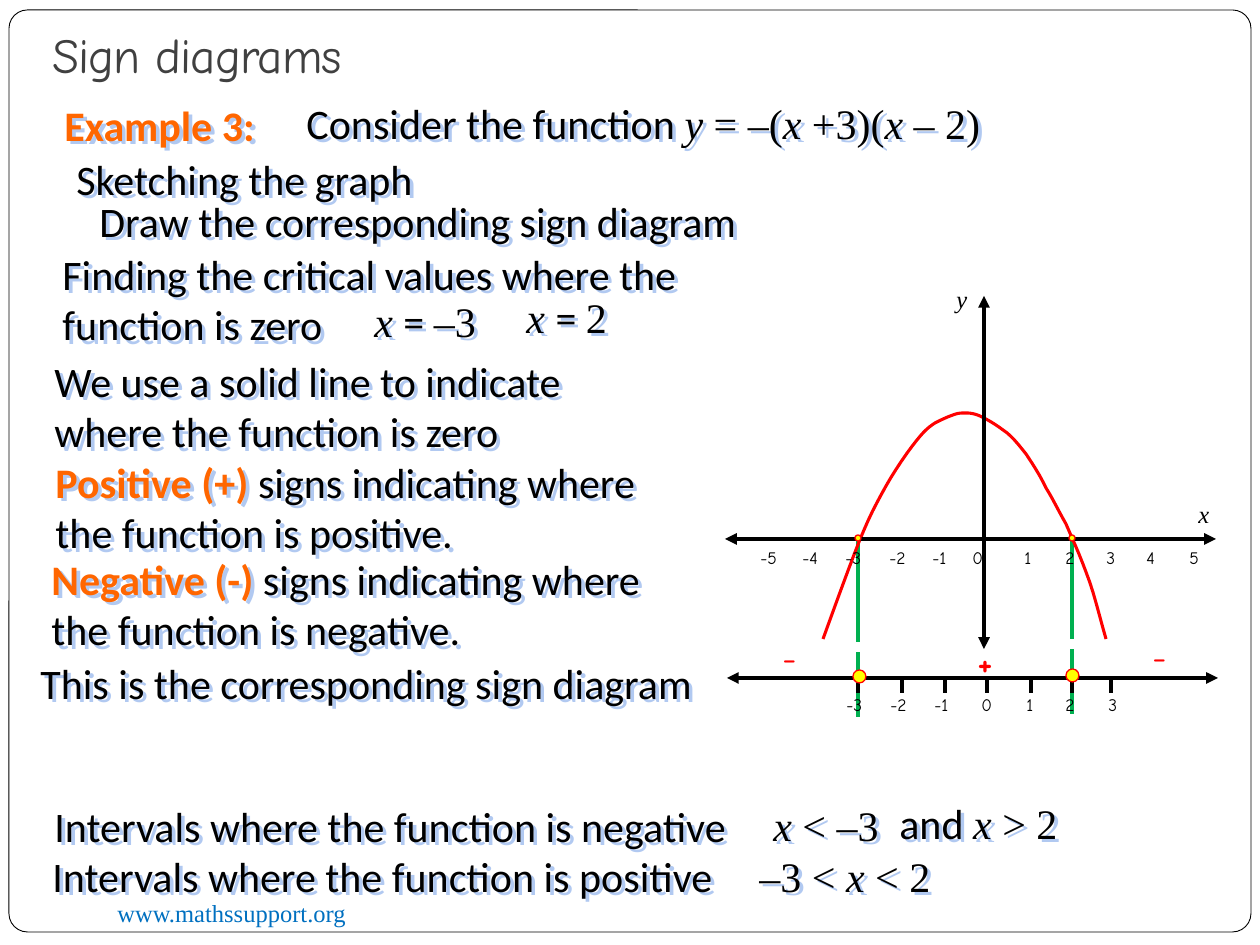
from dataclasses import dataclass

from lxml.etree import SubElement
from pptx import Presentation
from pptx.dml.color import RGBColor
from pptx.enum.shapes import MSO_CONNECTOR, MSO_SHAPE
from pptx.enum.text import MSO_ANCHOR, PP_ALIGN
from pptx.oxml.ns import qn
from pptx.util import Pt

PX = 914400 / 126
COLORS = {"ink": "000000", "white": "FFFFFF", "title": "404040", "link": "0070C0",
          "accent": "FF6600", "red": "FF0000", "green": "00B050",
          "yellow": "FFFF00", "shade": "B1C9F1"}
SANS, SERIF, COMIC = "Calibri", "Times New Roman", "Comic Neue"


@dataclass
class Run:
    text: str
    font: str = SANS
    color: str = "ink"
    bold: bool = False
    italic: bool = False


@dataclass
class Note:
    left: int
    top: int
    width: int
    height: int
    runs: list


@dataclass
class Scale:
    top: int
    marks: dict


def emu(px: float) -> int:
    return round(px * PX)


def rgb(name: str) -> RGBColor:
    return RGBColor.from_string(COLORS[name])


def fill_text(frame, runs: list, size: float) -> None:
    para = frame.paragraphs[0]
    para.alignment = PP_ALIGN.LEFT
    for item in runs:
        run = para.add_run()
        run.text = item.text
        font = run.font
        font.name, font.size = item.font, Pt(size)
        font.bold, font.italic = item.bold, item.italic
        font.color.rgb = rgb(item.color)


def add_text(slide, note: Note, size: float = 24, shade: bool = False) -> None:
    box = slide.shapes.add_textbox(*map(emu, (note.left, note.top, note.width, note.height)))
    box.text_frame.word_wrap = True
    fill_text(box.text_frame, note.runs, size)
    if shade:
        effects = SubElement(box.element.spPr, qn("a:effectLst"))
        shadow = SubElement(effects, qn("a:outerShdw"), dist="38100", dir="2700000",
                            algn="tl", rotWithShape="0")
        SubElement(shadow, qn("a:srgbClr"), val=COLORS["shade"])


def add_line(slide, x1: int, y1: int, x2: int, y2: int, color: str = "ink",
             width: float = 1.75, arrows: bool = False) -> None:
    line = slide.shapes.add_connector(MSO_CONNECTOR.STRAIGHT, *map(emu, (x1, y1, x2, y2)))
    line.line.color.rgb = rgb(color)
    line.line.width = Pt(width)
    if arrows:
        for end in ("a:headEnd", "a:tailEnd"):
            SubElement(line.line._get_or_add_ln(), qn(end), type="triangle")
    SubElement(line.element.spPr, qn("a:effectLst"))


def add_block(slide, kind, left: int, top: int, width: int, height: int,
              fill: str, edge: str, weight: float):
    block = slide.shapes.add_shape(kind, *map(emu, (left, top, width, height)))
    block.shadow.inherit = False
    block.fill.solid()
    block.fill.fore_color.rgb = rgb(fill)
    block.line.color.rgb = rgb(edge)
    block.line.width = Pt(weight)
    return block


def add_curve(slide, start: tuple, curves: list, steps: int = 6) -> None:
    """Draw joined cubic curves as a fine open line."""
    points, here = [], start
    for c1, c2, end in curves:
        for step in range(1, steps + 1):
            t = step / steps
            points.append(tuple(
                emu((1 - t) ** 3 * a + 3 * (1 - t) ** 2 * t * b
                    + 3 * (1 - t) * t ** 2 * c + t ** 3 * d)
                for a, b, c, d in zip(here, c1, c2, end)))
        here = end
    build = slide.shapes.build_freeform(emu(start[0]), emu(start[1]))
    build.add_line_segments(points, close=False)
    curve = build.convert_to_shape()
    curve.shadow.inherit = False
    curve.fill.background()
    curve.line.color.rgb = rgb("red")
    curve.line.width = Pt(1.75)


def var(name: str) -> Run:
    return Run(name, SERIF, italic=True)


def num(text: str) -> Run:
    return Run(text, SERIF)


def key(text: str) -> Run:
    return Run(text, color="accent", bold=True)


NOTES = [
    Note(294, 91, 798, 63, [Run("Consider the function "), var("y"), num(" = –("), var("x"),
                            num(" +3)("), var("x"), num(" – 2)")]),
    Note(52, 93, 220, 63, [key("Example 3:")]),
    Note(64, 147, 663, 63, [Run("Sketching the graph")]),
    Note(87, 189, 663, 63, [Run("Draw the corresponding sign diagram")]),
    Note(50, 242, 663, 115, [Run("Finding the critical values where the function is zero")]),
    Note(28, 651, 693, 63, [Run("This is the corresponding sign diagram")]),
    Note(42, 349, 547, 115, [Run("We use a solid line to indicate where the function is zero")]),
    Note(43, 450, 651, 115, [key("Positive (+) "),
                             Run("signs indicating where the function is positive.")]),
    Note(39, 547, 651, 115, [key("Negative (-) "),
                             Run("signs indicating where the function is negative.")]),
    Note(40, 844, 716, 63, [Run("Intervals where the function is positive")]),
    Note(42, 794, 718, 63, [Run("Intervals where the function is negative")]),
    Note(761, 793, 136, 63, [var("x"), num(" < –3")]),
    Note(747, 844, 202, 63, [num("–3 < "), var("x"), num(" < 2")]),
    Note(887, 791, 286, 63, [Run("and "), var("x"), num(" > 2")]),
    Note(362, 289, 145, 63, [var("x "), Run("= "), num("–3")]),
    Note(514, 285, 145, 63, [var("x "), Run("= "), num("2")]),
]
SCALES = [
    Scale(688, {-3: 834, -2: 878, -1: 922, 0: 969, 1: 1014, 2: 1053, 3: 1096}),
    Scale(541, {-5: 748, -4: 790, -3: 833, -2: 877, -1: 920, 0: 960,
                1: 1012, 2: 1053, 3: 1094, 4: 1134, 5: 1177}),
]
TICKS = [858, 902, 945, 987, 1031, 1072, 1111]
ROOTS = [(858, 541), (1072, 538)]
PARABOLA = [
    ((834, 609), (849, 567), (859, 542)), ((869, 517), (876, 504), (886, 486)),
    ((895, 470), (908, 451), (917, 440)), ((925, 430), (929, 427), (935, 423)),
    ((941, 420), (947, 417), (953, 415)), ((958, 413), (961, 413), (966, 413)),
    ((971, 413), (976, 414), (982, 417)), ((988, 420), (995, 424), (1003, 430)),
    ((1011, 435), (1018, 444), (1026, 454)), ((1032, 463), (1040, 475), (1046, 488)),
    ((1053, 499), (1058, 510), (1066, 524)), ((1072, 538), (1079, 553), (1086, 572)),
    ((1094, 592), (1099, 615), (1106, 639)),
]


def main() -> None:
    deck = Presentation()
    deck.slide_width, deck.slide_height = emu(1260), emu(945)
    slide = deck.slides.add_slide(deck.slide_layouts[5])

    # Frame, title and site address
    title = slide.shapes.title
    frame = add_block(slide, MSO_SHAPE.ROUNDED_RECTANGLE, 9, 10, 1242, 922, "white", "ink", 0.5)
    frame.adjustments[0] = 0.02
    title.element.addprevious(frame.element)
    title.left, title.top, title.width, title.height = map(emu, (40, 21, 1134, 69))
    title.text_frame.vertical_anchor = MSO_ANCHOR.BOTTOM
    fill_text(title.text_frame, [Run("Sign diagrams", COMIC, "title")], 28)
    para = title.text_frame.paragraphs[0]
    para.line_spacing = 0.85
    para.runs[0].font._element.set("spc", "-50")
    add_text(slide, Note(105, 892, 410, 43, [Run("www.mathssupport.org", SERIF, "link")]), 14)

    # Root guides, parabola and axes
    for x, top in ROOTS:
        add_line(slide, x, top, x, top + 176, "green")
    add_curve(slide, (823, 639), PARABOLA)
    for ends in ((727, 678, 1218, 678), (984, 296, 984, 649), (725, 539, 1216, 539)):
        add_line(slide, *ends, width=2.25, arrows=True)

    # Ticks and numbers
    for x in TICKS:
        add_line(slide, x, 680, x, 693)
    for scale in SCALES:
        for value, left in scale.marks.items():
            width = 52 if value < 0 else 40
            add_text(slide, Note(left, scale.top, width, 34, [Run(str(value), COMIC)]), 10)

    # Signs and axis names
    for left, top, sign in ((770, 629, "-"), (965, 634, "+"), (1140, 628, "-")):
        add_text(slide, Note(left, top, 40, 55, [Run(sign, COMIC, "red", bold=sign == "+")]), 20)
    for left, top, name in ((944, 278, "y"), (1186, 493, "x")):
        add_text(slide, Note(left, top, 40, 43, [var(name)]), 14)

    # Dots at the roots, and gaps in the guides
    for left, top, size in ((853, 670, 13), (1066, 669, 13), (855, 535, 6), (1069, 535, 6)):
        add_block(slide, MSO_SHAPE.OVAL, left, top, size, size, "yellow", "red", 0.75)
    for left, top in ((1050, 640), (842, 643)):
        add_block(slide, MSO_SHAPE.RECTANGLE, left, top, 38, 8, "white", "white", 1)

    # Explanation
    for note in NOTES:
        add_text(slide, note, shade=True)
    deck.save("out.pptx")


if __name__ == "__main__":
    main()
